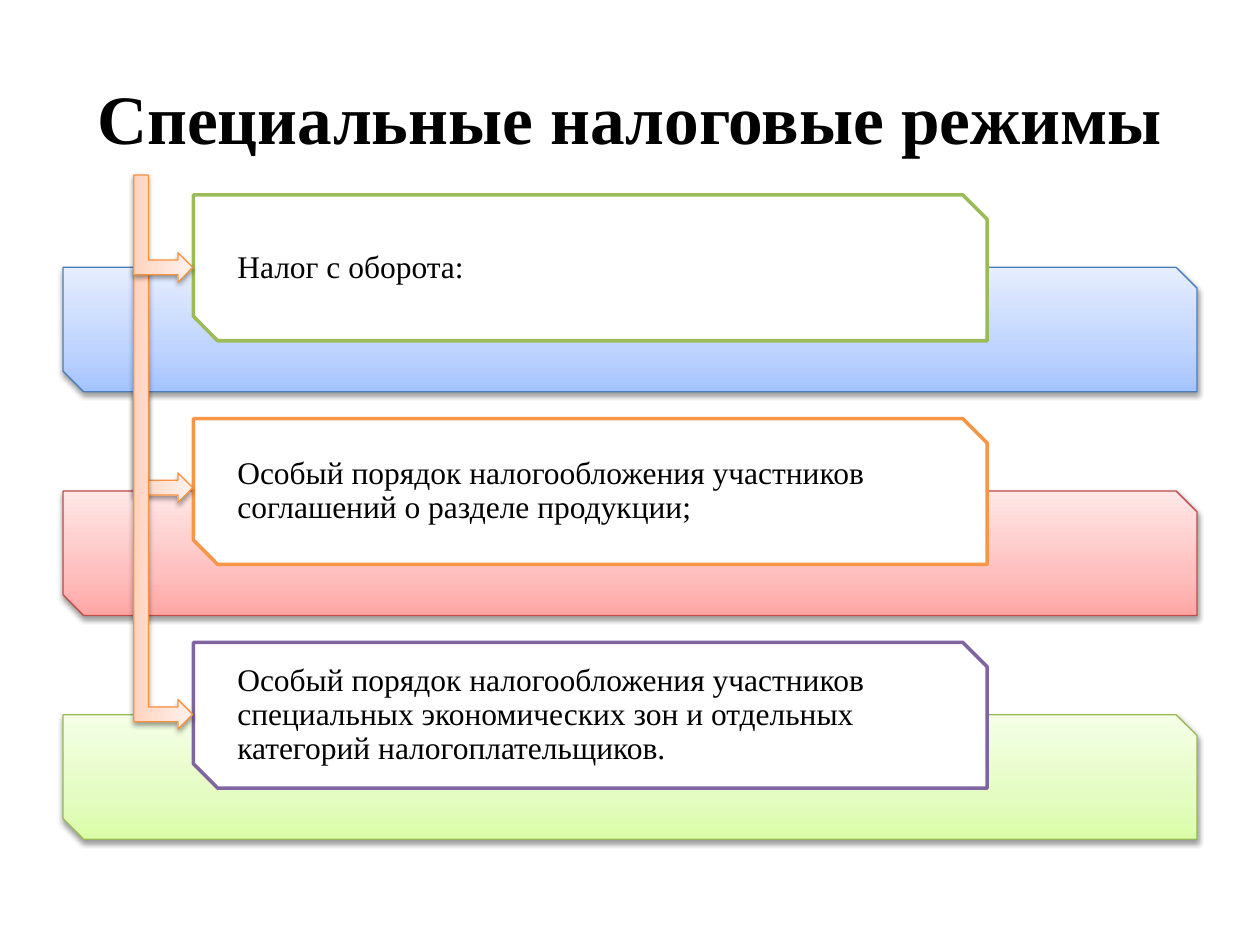
from dataclasses import dataclass

from lxml.etree import SubElement
from pptx import Presentation
from pptx.dml.color import RGBColor
from pptx.enum.shapes import MSO_SHAPE
from pptx.enum.text import MSO_ANCHOR, PP_ALIGN
from pptx.oxml.ns import qn
from pptx.util import Cm, Pt

FONT = "Times New Roman"
COLORS = {
    "text": "000000", "white": "FFFFFF", "shadow": "000000",
    "blue": "4B7EBC", "red": "BF4C48", "lime": "98B955",
    "green": "9BBB59", "orange": "F79646", "purple": "8064A2",
    "arrow": "F69240",
}
GRADIENTS = {
    "blue": ("A4C4FF", "BFD4FF", "E6EEFF"),
    "red": ("FFA6A5", "FFC0BF", "FFE7E7"),
    "lime": ("DAFDA7", "E4FCC2", "F5FFE7"),
    "arrow": ("FFD2BD", "FFDED0", "FFF2ED"),
}
STOPS = (0, 35, 100)
ROW_TOP, ROW_STEP, BAR_DROP = 3.93, 4.51, 1.46
ARROW_CENTER, ARROW_DEPTH = 3.29, 1.19


@dataclass
class Row:
    text: str
    bar: str
    border: str


@dataclass
class Arrow:
    middle: float
    length: float


ROWS = [
    Row("Налог с оборота:", "blue", "green"),
    Row("Особый порядок налогообложения участников соглашений о разделе "
        "продукции;", "red", "orange"),
    Row("Особый порядок налогообложения участников специальных экономических "
        "зон и отдельных категорий налогоплательщиков.", "lime", "purple"),
]
ARROWS = [Arrow(9.05, 2.16), Arrow(10.04, 9.32), Arrow(4.61, 2.16)]


def rgb(name: str) -> RGBColor:
    return RGBColor.from_string(COLORS[name])


def add_run(p, text: str, size: float, bold: bool = False) -> None:
    r = p.add_run()
    r.text = text
    r.font.name, r.font.size, r.font.bold = FONT, Pt(size), bold
    r.font.color.rgb = rgb("text")


def add_outlined(s, kind, left: float, top: float, width: float,
                 height: float, line: str, weight: float):
    sp = s.shapes.add_shape(kind, Cm(left), Cm(top), Cm(width), Cm(height))
    sp.shadow.inherit = False
    sp.line.color.rgb = rgb(line)
    sp.line.width = Pt(weight)
    return sp


def add_glossy(s, kind, left: float, top: float, width: float,
               height: float, color: str):
    """Shape with a three-stop gradient, thin line and soft shadow below."""
    sp = add_outlined(s, kind, left, top, width, height, color, 0.75)
    sp.fill.gradient()
    sp.fill.gradient_angle = 90
    props = sp._element.spPr
    stops = props.find(".//" + qn("a:gsLst"))
    stops.clear()
    for pos, value in zip(STOPS, GRADIENTS[color]):
        gs = SubElement(stops, qn("a:gs"), pos=str(pos * 1000))
        SubElement(gs, qn("a:srgbClr"), val=value)
    shadow = SubElement(props.find(qn("a:effectLst")), qn("a:outerShdw"),
                        blurRad=str(Pt(3.1)), dist=str(Pt(1.6)),
                        dir="5400000", rotWithShape="0")
    clr = SubElement(shadow, qn("a:srgbClr"), val=COLORS["shadow"])
    SubElement(clr, qn("a:alpha"), val="38000")
    return sp


def add_row(s, row: Row, top: float) -> None:
    kind = MSO_SHAPE.SNIP_2_DIAG_RECTANGLE
    add_glossy(s, kind, 1.27, top + BAR_DROP, 22.86, 2.51, row.bar)
    sp = add_outlined(s, kind, 3.9, top, 16, 2.94, row.border, 2)
    sp.fill.solid()
    sp.fill.fore_color.rgb = rgb("white")
    tf = sp.text_frame
    tf.word_wrap = True
    tf.vertical_anchor = MSO_ANCHOR.MIDDLE
    tf.margin_left = tf.margin_right = Cm(0.64)
    tf.margin_top = tf.margin_bottom = Cm(0.03)
    p = tf.paragraphs[0]
    p.alignment = PP_ALIGN.LEFT
    p.line_spacing = 0.9
    add_run(p, row.text, 18)


def add_arrow(s, arrow: Arrow) -> None:
    sp = add_glossy(s, MSO_SHAPE.BENT_UP_ARROW,
                    ARROW_CENTER - arrow.length / 2,
                    arrow.middle - ARROW_DEPTH / 2,
                    arrow.length, ARROW_DEPTH, "arrow")
    sp.rotation = 90


def main() -> None:
    prs = Presentation()
    prs.slide_width, prs.slide_height = Cm(25.4), Cm(19.05)
    s = prs.slides.add_slide(prs.slide_layouts[5])

    # Title
    title = s.shapes.title
    title.left, title.top = Cm(1.27), Cm(0.76)
    title.width, title.height = Cm(22.86), Cm(3.18)
    tf = title.text_frame
    tf.word_wrap = True
    tf.vertical_anchor = MSO_ANCHOR.MIDDLE
    tf.paragraphs[0].alignment = PP_ALIGN.CENTER
    add_run(tf.paragraphs[0], "Специальные налоговые режимы", 39.6, True)

    # Tax regimes
    for i, row in enumerate(ROWS):
        add_row(s, row, ROW_TOP + i * ROW_STEP)

    # Arrows from the title to each regime
    for arrow in ARROWS:
        add_arrow(s, arrow)

    prs.save("out.pptx")


if __name__ == "__main__":
    main()
